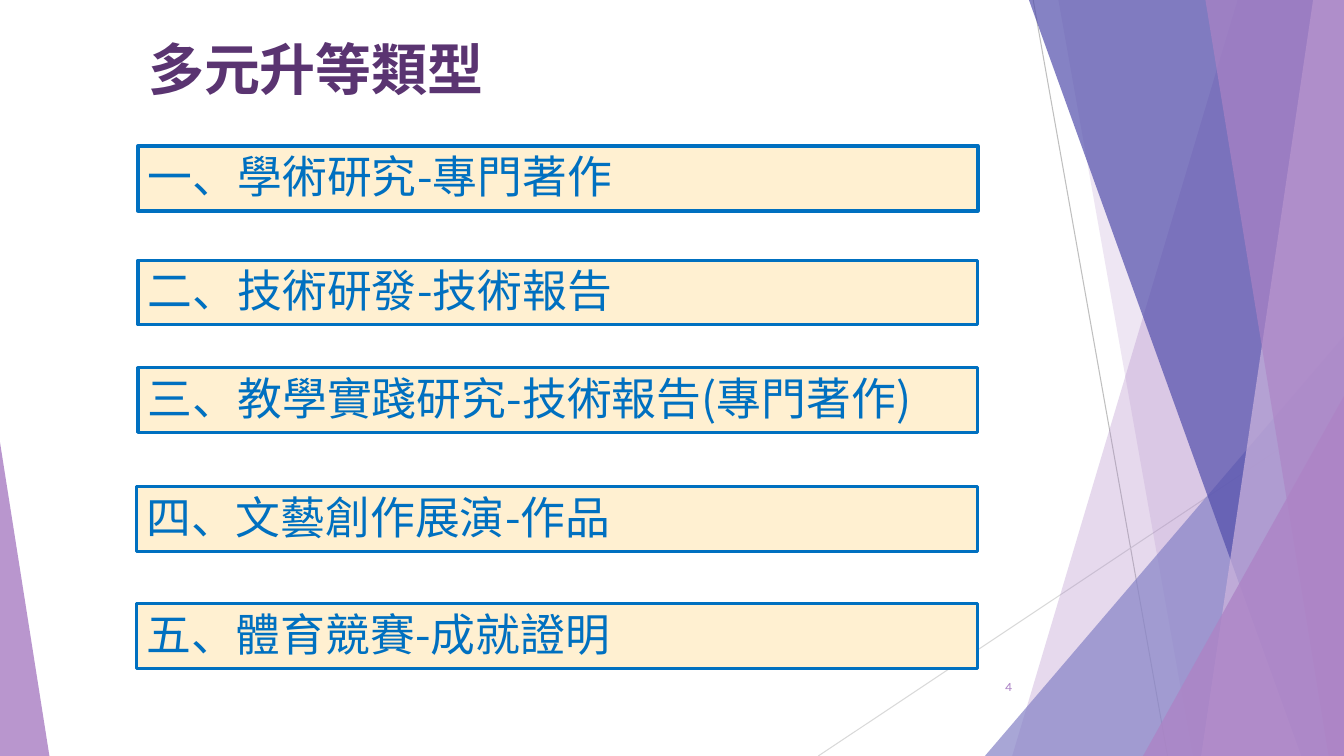
from lxml.etree import SubElement
from pptx import Presentation
from pptx.dml.color import RGBColor
from pptx.enum.shapes import MSO_CONNECTOR, MSO_SHAPE
from pptx.enum.text import MSO_ANCHOR, PP_ALIGN
from pptx.oxml.ns import qn
from pptx.util import Pt

WIDE, HIGH = 960, 540
HUES = {
    "lilac": "AD84C6", "pale": "CEB5DD", "blue": "8784C7", "deep": "524EAB",
    "gray": "BFBFBF", "light": "D9D9D9", "plum": "5A3471",
    "cream": "FFF0D1", "azure": "0070C0",
}
CJK, LATIN = "Noto Sans CJK SC", "Karla"
LINES = [((738, 0), (834, HIGH), "gray"), ((WIDE, 290), (584.5, HIGH), "light")]
BACK = [(884, 723, "lilac", 30), (756, 852, "lilac", 20)]
FRONT = [(735, 929.5, "deep", 70), (938, 858, "pale", 70), (861, 949, "lilac", 65)]
ITEMS = [
    ("一、學術研究-專門著作", 98.6, 104.4, 3),
    ("二、技術研發-技術報告", 98.6, 185.8, 2.25),
    ("三、教學實踐研究-技術報告(專門著作)", 98.6, 262.8, 2.25),
    ("四、文藝創作展演-作品", 97.4, 347.6, 2.25),
    ("五、體育競賽-成就證明", 97.4, 431.3, 2.25),
]


class Deck:
    """Holds the style and the current slide, with a method per element."""

    def __init__(self):
        self.prs = Presentation()
        self.prs.slide_width, self.prs.slide_height = Pt(WIDE), Pt(HIGH)
        self.slide = self.prs.slides.add_slide(self.prs.slide_layouts[5])
        self.shapes = self.slide.shapes

    def hue(self, name):
        return RGBColor.from_string(HUES[name])

    def paint(self, shape, name, alpha=100):
        shape.shadow.inherit = False
        shape.line.fill.background()
        shape.fill.solid()
        shape.fill.fore_color.rgb = self.hue(name)
        if alpha < 100:
            tone = shape._element.spPr.find(".//" + qn("a:srgbClr"))
            SubElement(tone, qn("a:alpha"), val=str(alpha * 1000))

    def label(self, shape, text, name, size, face=CJK, bold=False,
              align=PP_ALIGN.LEFT, pads=(7.2, 0, 0, 4)):
        frame = shape.text_frame
        sides = ("left", "top", "right", "bottom")
        style = {f"margin_{side}": Pt(pad) for side, pad in zip(sides, pads)}
        style.update(word_wrap=True, vertical_anchor=MSO_ANCHOR.MIDDLE)
        for key, val in style.items():
            setattr(frame, key, val)
        para = frame.paragraphs[0]
        para.alignment = align
        run = para.add_run()
        run.text = text
        for key, val in {"name": face, "size": Pt(size), "bold": bold}.items():
            setattr(run.font, key, val)
        run.font.color.rgb = self.hue(name)
        SubElement(run._r.get_or_add_rPr(), qn("a:ea"), typeface=face)

    def line(self, start, end, name):
        ends = [Pt(n) for n in (*start, *end)]
        line = self.shapes.add_connector(MSO_CONNECTOR.STRAIGHT, *ends)
        line.line.color.rgb = self.hue(name)
        line.line.width = Pt(0.75)
        SubElement(line._element.spPr, qn("a:effectLst"))

    def band(self, top, base, name, alpha):
        form = self.shapes.build_freeform(Pt(top), 0)
        spots = [(WIDE, 0), (WIDE, HIGH), (base, HIGH)]
        form.add_line_segments([(Pt(x), Pt(y)) for x, y in spots], close=True)
        self.paint(form.convert_to_shape(), name, alpha)

    def wedge(self, left, top, width, tip, name, alpha):
        area = [Pt(n) for n in (left, top, width, HIGH - top)]
        shape = self.shapes.add_shape(MSO_SHAPE.ISOSCELES_TRIANGLE, *area)
        shape.adjustments[0] = tip
        self.paint(shape, name, alpha)

    def title(self, text):
        shape = self.shapes.title
        area = {"left": 98.6, "top": 22.3, "width": 425.5, "height": 62.6}
        for key, val in area.items():
            setattr(shape, key, Pt(val))
        self.label(shape, text, "plum", 40, bold=True, pads=(7.2, 0, 7.2, 10))

    def box(self, text, left, top, edge):
        area = [Pt(n) for n in (left, top, 698.4 - left, 46.1)]
        shape = self.shapes.add_shape(MSO_SHAPE.RECTANGLE, *area)
        self.paint(shape, "cream")
        shape.line.color.rgb = self.hue("azure")
        shape.line.width = Pt(edge)
        self.label(shape, text, "azure", 32)

    def number(self, text):
        area = [Pt(n) for n in (676, 476, 54, 28.8)]
        self.label(self.shapes.add_textbox(*area), text, "lilac", 9, LATIN,
                   align=PP_ALIGN.RIGHT, pads=(7.2, 3.6, 7.2, 3.6))


def main():
    deck = Deck()
    for line in LINES:
        deck.line(*line)
    for band in BACK:
        deck.band(*band)
    deck.wedge(703.5, 240, 256.5, 1, "blue", 72)
    for band in FRONT:
        deck.band(*band)
    deck.wedge(816.5, 283, 143.5, 1, "lilac", 80)
    deck.wedge(0, 316, 35.3, 0, "lilac", 85)
    deck.title("多元升等類型")
    deck.number("4")
    for item in ITEMS:
        deck.box(*item)
    deck.prs.save("out.pptx")


if __name__ == "__main__":
    main()
